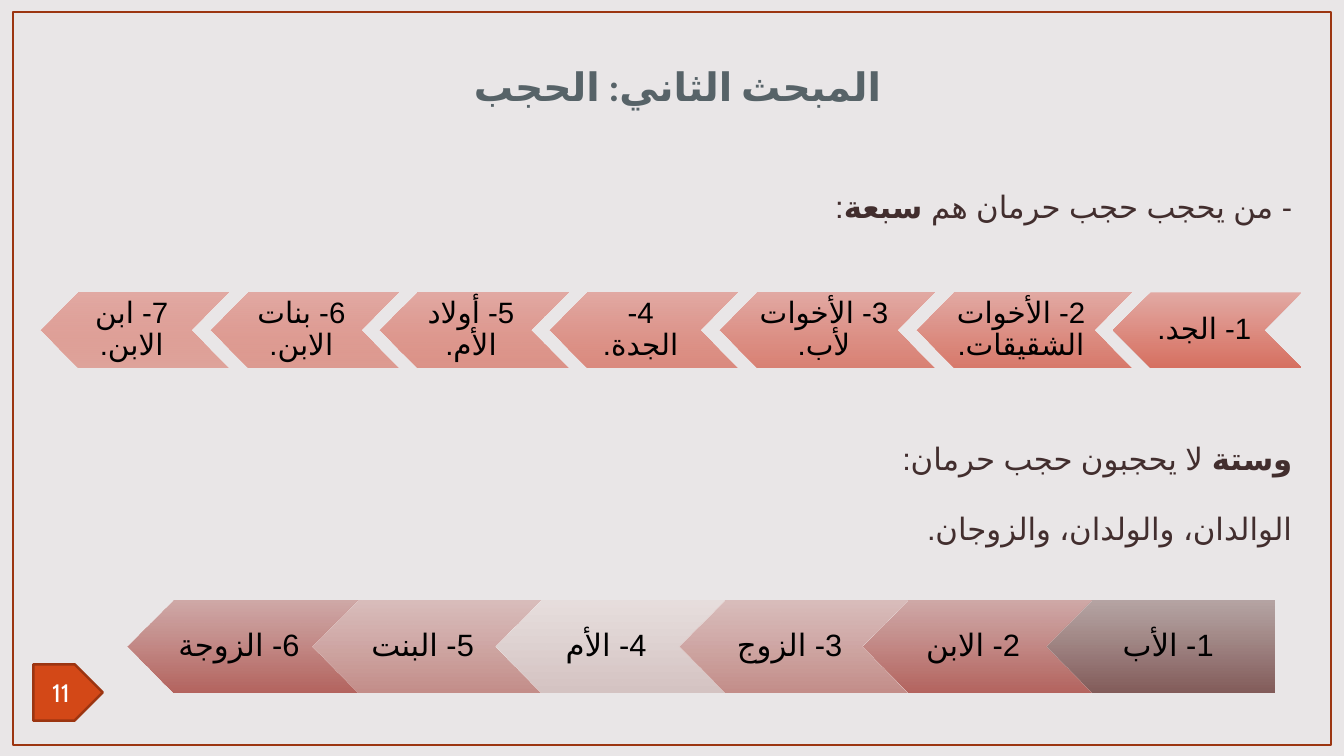
from pptx import Presentation
from pptx.dml.color import RGBColor
from pptx.enum.lang import MSO_LANGUAGE_ID
from pptx.enum.shapes import MSO_SHAPE
from pptx.enum.text import MSO_ANCHOR, PP_ALIGN
from pptx.oxml import parse_xml
from pptx.oxml.ns import qn
from pptx.util import Cm, Pt

ARABIC = MSO_LANGUAGE_ID.ARABIC
CHEVRON, PLATE, RECT = MSO_SHAPE.CHEVRON, MSO_SHAPE.PENTAGON, MSO_SHAPE.RECTANGLE
MIDDLE, TOP = MSO_ANCHOR.MIDDLE, MSO_ANCHOR.TOP
CENTER, JUSTIFY = PP_ALIGN.CENTER, PP_ALIGN.JUSTIFY
NS = "http://schemas.openxmlformats.org/drawingml/2006/main"

# Content
TITLE = "المبحث الثاني: الحجب"
PAGE = "11"
# Each line: space before in points, then (text, bold) runs
BODY = [
    (0, [("- من يحجب حجب حرمان هم ", False), ("سبعة", True), (":", False)]),
    (134, [("وستة", True), (" لا يحجبون حجب حرمان:", False)]),
    (4.4, [("الوالدان، والولدان، والزوجان.", False)]),
]
# Each heir: text, width in cm
BARRED = [
    ("1- الجد.", 4.75),
    ("2- الأخوات الشقيقات.", 5.44),
    ("3- الأخوات لأب.", 5.44),
    ("4- الجدة.", 4.75),
    ("5- أولاد الأم.", 4.75),
    ("6- بنات الابن.", 4.75),
    ("7- ابن الابن.", 4.75),
]
# Each heir: text, colour pair
KEPT = [
    ("1- الأب", "dark"),
    ("2- الابن", "red"),
    ("3- الزوج", "rose"),
    ("4- الأم", "pale"),
    ("5- البنت", "rose"),
    ("6- الزوجة", "red"),
]

COLORS = {
    "back": "E9E6E7", "edge": "9C3511", "badge": "D34817", "white": "FFFFFF",
    "title": "576368", "body": "422E2E", "black": "000000",
}
BLENDS = {
    "coral": ("E2A39C", "D56453"), "dark": ("B09D9C", "835C5A"),
    "red": ("CDA2A0", "B4645F"), "rose": ("D8B9B7", "C48E8A"),
    "pale": ("E7DDDC", "D5C4C3"),
}


def color(name):
    return RGBColor.from_string(COLORS[name])


def set_all(item, values):
    for key, value in values.items():
        setattr(item, key, value)


def set_frame(frame, anchor, insets=(0.25, 0.13, 0.25, 0.13)):
    left, top, right, low = map(Cm, insets)
    set_all(frame, {
        "word_wrap": True, "vertical_anchor": anchor, "margin_left": left,
        "margin_top": top, "margin_right": right, "margin_bottom": low,
    })


def add_run(para, text, size, face, tint, bold=False):
    run = para.add_run()
    run.text = text
    set_all(run.font, {"size": Pt(size), "name": face, "bold": bold,
                       "language_id": ARABIC})
    run.font.color.rgb = color(tint)
    # Arabic letters take the complex-script face
    run.font._element.append(parse_xml(f'<a:cs xmlns:a="{NS}" typeface="{face}"/>'))


def set_para(para, align, spacing, before=0, after=0):
    para._p.get_or_add_pPr().set("rtl", "1")
    set_all(para, {
        "alignment": align, "line_spacing": spacing,
        "space_before": Pt(before), "space_after": Pt(after),
    })


def add_solid(shapes, kind, box, fill=None):
    shape = shapes.add_shape(kind, *map(Cm, box))
    shape.shadow.inherit = False
    if fill:
        shape.fill.solid()
        shape.fill.fore_color.rgb = color(fill)
    else:
        shape.fill.background()
    shape.line.color.rgb = color("edge")
    shape.line.width = Pt(1.75)
    return shape


def add_arrow(shapes, kind, box, blend, alpha):
    shape = shapes.add_shape(kind, *map(Cm, box))
    shape.shadow.inherit = False
    shape.line.fill.background()
    shape.rotation = 180
    first, last = BLENDS[blend]
    stops = "".join(
        f'<a:gs pos="{pos}"><a:srgbClr val="{tint}">'
        f'<a:alpha val="{round(part * 1000)}"/></a:srgbClr></a:gs>'
        for pos, tint, part in ((0, first, 90), (100000, last, alpha)))
    shape._element.spPr.find(qn("a:prstGeom")).addnext(parse_xml(
        f'<a:gradFill xmlns:a="{NS}" rotWithShape="0"><a:gsLst>{stops}</a:gsLst>'
        '<a:lin ang="5400000" scaled="0"/></a:gradFill>'))


def add_row(slide, heirs, right, top, high, lap, size, insets):
    """Lay arrows from right to left; each heir is kind, text, width, blend, alpha."""
    shapes = slide.shapes.add_group_shape().shapes
    for kind, text, wide, blend, alpha in heirs:
        left = right - wide
        add_arrow(shapes, kind, (left, top, wide, high), blend, alpha)
        near = high / 4 if kind == PLATE else high / 2
        far = 0 if kind == PLATE else high / 2
        label = shapes.add_textbox(
            *map(Cm, (left + near, top, wide - near - far, high)))
        set_frame(label.text_frame, MIDDLE, insets)
        para = label.text_frame.paragraphs[0]
        set_para(para, CENTER, 0.9)
        add_run(para, text, size, "Arial", "black")
        right = left + lap


def main():
    deck = Presentation()
    deck.slide_width, deck.slide_height = Cm(33.87), Cm(19.05)
    slide = deck.slides.add_slide(deck.slide_layouts[5])
    slide.background.fill.solid()
    slide.background.fill.fore_color.rgb = color("back")

    # Frame and page badge
    add_solid(slide.shapes, RECT, (0.33, 0.3, 33.22, 18.47))
    badge = add_solid(slide.shapes, PLATE, (0.84, 16.74, 1.75, 1.42), "badge")
    set_frame(badge.text_frame, MIDDLE, (0, 0, 0, 0))
    para = badge.text_frame.paragraphs[0]
    para.alignment = CENTER
    add_run(para, PAGE, 18, "Cabin", "white")

    # Title
    title = slide.shapes.title
    set_all(title, {"left": Cm(7.52), "top": Cm(0.79),
                    "width": Cm(19.1), "height": Cm(2.62)})
    set_frame(title.text_frame, MIDDLE)
    para = title.text_frame.paragraphs[0]
    set_para(para, CENTER, 1.1, after=6)
    add_run(para, TITLE, 28, "Calibri", "title", True)

    # Body lines
    body = slide.shapes.add_textbox(Cm(0.69), Cm(4.14), Cm(32.13), Cm(14.02))
    frame = body.text_frame
    set_frame(frame, TOP)
    for num, (before, runs) in enumerate(BODY):
        para = frame.add_paragraph() if num else frame.paragraphs[0]
        set_para(para, JUSTIFY, 1.5, before, 6)
        for text, bold in runs:
            add_run(para, text, 22, "Arial", "body", bold)

    # Arrow rows
    fade = 40 / (len(BARRED) - 1)
    barred = [(CHEVRON, text, wide, "coral", 90 - fade * num)
              for num, (text, wide) in enumerate(BARRED)]
    add_row(slide, barred, 32.8, 7.37, 1.9, 1.9 / 4, 21,
            (0.07, 0.07, 0.22, 0.07))
    kept = [(CHEVRON if num else PLATE, text, 5.78, blend, 100)
            for num, (text, blend) in enumerate(KEPT)]
    add_row(slide, kept, 32.13, 15.14, 2.31, 2.31 / 2, 22,
            (0.07, 0.15, 0.25, 0.15))

    deck.save("out.pptx")


if __name__ == "__main__":
    main()
